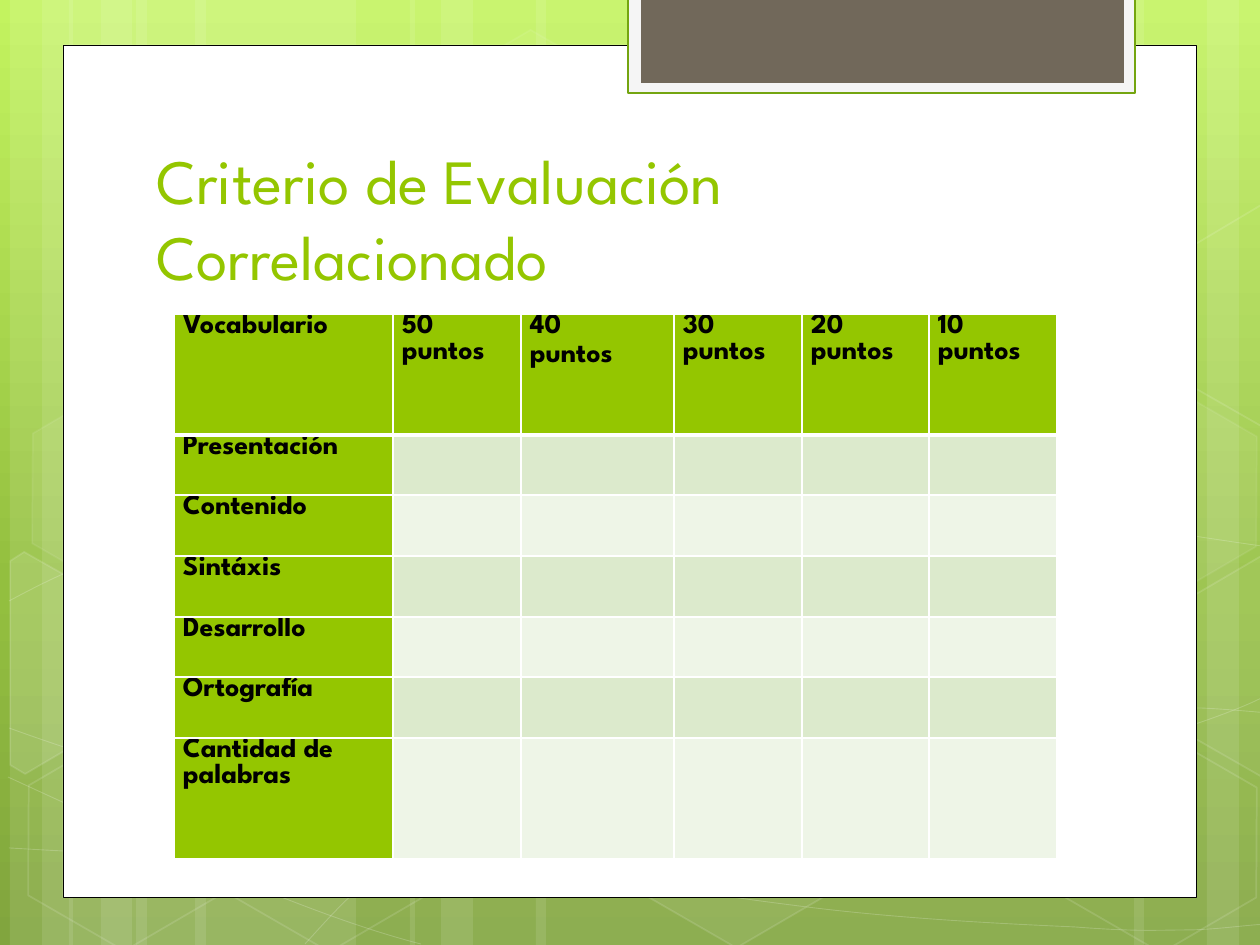
from copy import deepcopy
from math import cos, radians, sin
from typing import NamedTuple, Optional

from lxml.etree import SubElement
from pptx import Presentation
from pptx.dml.color import RGBColor
from pptx.enum.shapes import MSO_SHAPE as SHAPE
from pptx.enum.text import MSO_ANCHOR as ANCHOR, PP_ALIGN as ALIGN
from pptx.oxml.ns import qn
from pptx.util import Pt

EMU_PER_PX = 914400 / 126
FONT = "League Spartan"
WHITE, BLACK, GREEN = "FFFFFF", "000000", "94C600"
BANDS = ("DCEACC", "EEF5E7")
BACKGROUND = ((0, "C3F35F"), (0.62, "93BF3F"), (1, "81A53E"))
TILT = 30

class Hexagon(NamedTuple):
    x: int
    y: int
    fill_alpha: int
    line_alpha: int

class CutHexagon(NamedTuple):
    """A tilted hexagon cut off by the slide edge, with its centre of rotation."""
    center: tuple
    points: list
    fill_alpha: int

class Panel(NamedTuple):
    x: int
    y: int
    w: int
    h: int
    fill: str
    line: Optional[str] = None
    weight: float = 0

STRIPES = [(x + dx, w) for x in (10, 69) for dx, w in ((126, 220), (0, 63), (32, 105))]
STRIPES += [(924, 220), (1207, 63), (1134, 105), (536, 388), (410, 63), (441, 105)]
# Each curve: a start point, then cubic segments (control, control, end).
CURVES = [
    [(9, 848), (77, 852), (145, 856), (239, 854), (334, 853), (451, 851), (577, 838),
     (703, 825), (882, 801), (998, 777), (1113, 753), (1231, 716), (1269, 694)],
    [(9, 601), (45, 582), (82, 562), (152, 543), (224, 524), (326, 496), (437, 488),
     (549, 479), (685, 478), (824, 488), (963, 498), (1193, 537), (1269, 547)],
    [(8, 777), (160, 847), (311, 916), (421, 944)],
    [(9, 728), (48, 742), (88, 756), (161, 776), (234, 795), (344, 827), (450, 848),
     (554, 869), (687, 892), (791, 905), (896, 919), (1008, 924), (1075, 927),
     (1140, 932), (1158, 930), (1191, 930), (1223, 929), (1246, 925), (1269, 924)],
    [(305, 944), (328, 919), (350, 893), (381, 871), (411, 848), (454, 823), (489, 805),
     (524, 788), (546, 779), (592, 767), (638, 755), (722, 737), (766, 728),
     (811, 719), (818, 719), (857, 717), (896, 713), (958, 709), (1000, 708),
     (1067, 708), (1134, 708), (1201, 708), (1223, 709), (1245, 711), (1268, 713)],
]
HEXAGONS = [
    Hexagon(421, 45, 4, 8), Hexagon(626, 742, 6, 12), Hexagon(14, 745, 0, 12),
    Hexagon(18, 393, 7, 8), Hexagon(219, 746, 0, 12), Hexagon(949, 571, 10, 12),
    Hexagon(1051, 747, 0, 12), Hexagon(1051, 396, 7, 8),
]
CUT_HEXAGONS = [
    CutHexagon((45, 674), [(10, 561), (24, 552), (121, 607), (120, 718), (25, 774),
                           (10, 765)], 10),
    CutHexagon((1241, 655), [(1167, 611), (1261, 556), (1271, 562), (1271, 772),
                             (1263, 777), (1167, 722)], 4),
    CutHexagon((1241, 304), [(1167, 261), (1261, 205), (1272, 212), (1271, 422),
                             (1263, 427), (1167, 372)], 0),
]
PANELS = [
    Panel(63, 45, 1134, 853, WHITE, BLACK, 0.5),
    Panel(628, -2, 507, 95, "F5F5F5", "74A510", 1.25),
    Panel(641, -2, 483, 85, "71685A"),
]
HEADER = ["Vocabulario", "50 puntos", "40\npuntos", "30 puntos", "20 puntos", "10 puntos"]
CRITERIA = ["Presentación", "Contenido", "Sintáxis", "Desarrollo", "Ortografía",
            "Cantidad de palabras"]
COL_WIDTHS = (219, 128, 153, 128, 127, 128)
ROW_HEIGHTS = (121, 60, 61, 61, 60, 61, 121)

def px(n: float) -> int:
    return round(n * EMU_PER_PX)

def rgb(value: str) -> RGBColor:
    return RGBColor.from_string(value)

def paint(fill, color: Optional[str], alpha: int = 100) -> None:
    """Apply a solid fill with an opacity in percent, or no fill."""
    if color is None or alpha == 0:
        fill.background()
        return
    fill.solid()
    fill.fore_color.rgb = rgb(color)
    if alpha < 100:
        clr = fill._xPr.find(f"{qn('a:solidFill')}/{qn('a:srgbClr')}")
        SubElement(clr, qn("a:alpha"), val=str(alpha * 1000))

def style(sp, fill: Optional[str], fill_alpha: int = 100, line: Optional[str] = None,
          line_alpha: int = 100, weight: float = 1) -> None:
    sp.shadow.inherit = False
    paint(sp.fill, fill, fill_alpha)
    paint(sp.line.fill, line, line_alpha)
    if line:
        sp.line.width = Pt(weight)

def write(tf, text: str, *, size: float, color: str, bold: bool = False,
          spacing: float = 0, leading: Optional[float] = None) -> None:
    tf.text = text
    for p in tf.paragraphs:
        p.alignment = ALIGN.LEFT
        p.space_before = p.space_after = Pt(spacing)
        if leading:
            p.line_spacing = Pt(leading)
        for r in p.runs:
            r.font.name, r.font.size, r.font.bold = FONT, Pt(size), bold
            r.font.color.rgb = rgb(color)

def draw_path(s, points: list, close: bool = False):
    emu = [(px(x), px(y)) for x, y in points]
    fb = s.shapes.build_freeform(*emu[0])
    fb.add_line_segments(emu[1:], close=close)
    return fb.convert_to_shape()

def draw_curve(s, points: list):
    """Draw a path and turn every three line segments into one cubic."""
    sp = draw_path(s, points)
    path = sp.element.find(f".//{qn('a:path')}")
    for i, ln in enumerate(path.findall(qn("a:lnTo"))):
        if i % 3 == 0:
            cubic = SubElement(path, qn("a:cubicBezTo"))
        cubic.append(ln[0])
        path.remove(ln)
    return sp

def turn_back(point: tuple, center: tuple) -> tuple:
    """Undo the tilt of a point around a centre."""
    c, n = cos(radians(TILT)), sin(radians(TILT))
    dx, dy = point[0] - center[0], point[1] - center[1]
    return center[0] + dx * c + dy * n, center[1] - dx * n + dy * c

def draw_shape(s, kind, *box: int):
    return s.shapes.add_shape(kind, *map(px, box))

def draw_background(s) -> None:
    fill = s.background.fill
    fill.gradient()
    fill.gradient_angle = 270
    stops = s.element.find(f".//{qn('a:gsLst')}")
    stops.append(deepcopy(stops[-1]))
    for stop, (position, color) in zip(fill.gradient_stops, BACKGROUND):
        stop.position, stop.color.rgb = position, rgb(color)

def draw_decoration(s) -> None:
    for x, w in STRIPES:
        style(draw_shape(s, SHAPE.RECTANGLE, x, 0, w, 945), WHITE, 10)
    for curve in CURVES:
        style(draw_curve(s, curve), None, line=WHITE, line_alpha=20, weight=0.5)
    for h in HEXAGONS:
        sp = draw_shape(s, SHAPE.HEXAGON, h.x, h.y, 220, 191)
        sp.rotation, sp.adjustments[0] = TILT, 0.285
        style(sp, WHITE, h.fill_alpha, WHITE, h.line_alpha)
    for h in CUT_HEXAGONS:
        sp = draw_path(s, [turn_back(p, h.center) for p in h.points], close=True)
        sp.rotation = TILT
        style(sp, WHITE, h.fill_alpha, WHITE, 12)
    for p in PANELS:
        style(draw_shape(s, SHAPE.RECTANGLE, *p[:4]), p.fill, line=p.line, weight=p.weight)

def draw_title(s) -> None:
    title = s.shapes.title
    s.shapes.element.append(title.element)  # bring in front of the panels
    title.left, title.top, title.width, title.height = map(px, (144, 141, 968, 158))
    tf = title.text_frame
    tf.word_wrap, tf.vertical_anchor = True, ANCHOR.BOTTOM
    write(tf, "Criterio de Evaluación Correlacionado", size=36, color=GREEN, leading=43)

def set_borders(cell, **weights: float) -> None:
    for side, weight in weights.items():
        ln = SubElement(cell._tc.get_or_add_tcPr(), qn(f"a:ln{side}"), w=str(Pt(weight)))
        SubElement(SubElement(ln, qn("a:solidFill")), qn("a:srgbClr"), val=WHITE)

def draw_table(s) -> None:
    rows = [HEADER] + [[name] + [""] * (len(HEADER) - 1) for name in CRITERIA]
    box = map(px, (174, 314, sum(COL_WIDTHS), sum(ROW_HEIGHTS)))
    table = s.shapes.add_table(len(rows), len(HEADER), *box).table
    table.first_row = table.horz_banding = False
    for col, w in zip(table.columns, COL_WIDTHS):
        col.width = px(w)
    for i, (row, h) in enumerate(zip(table.rows, ROW_HEIGHTS)):
        row.height = px(h)
        for j, cell in enumerate(row.cells):
            set_borders(cell, L=1, R=1, T=3 if i == 1 else 1, B=3 if i == 0 else 1)
            paint(cell.fill, GREEN if i == 0 or j == 0 else BANDS[(i - 1) % 2])
            if rows[i][j]:
                cell.margin_left = cell.margin_right = px(9)
                cell.margin_top = cell.margin_bottom = 0
                write(cell.text_frame, rows[i][j], size=16, color=BLACK, bold=True, spacing=1)

prs = Presentation()
prs.slide_width, prs.slide_height = px(1260), px(945)
slide = prs.slides.add_slide(prs.slide_layouts[5])
for draw in (draw_background, draw_decoration, draw_title, draw_table):
    draw(slide)
prs.save("out.pptx")
